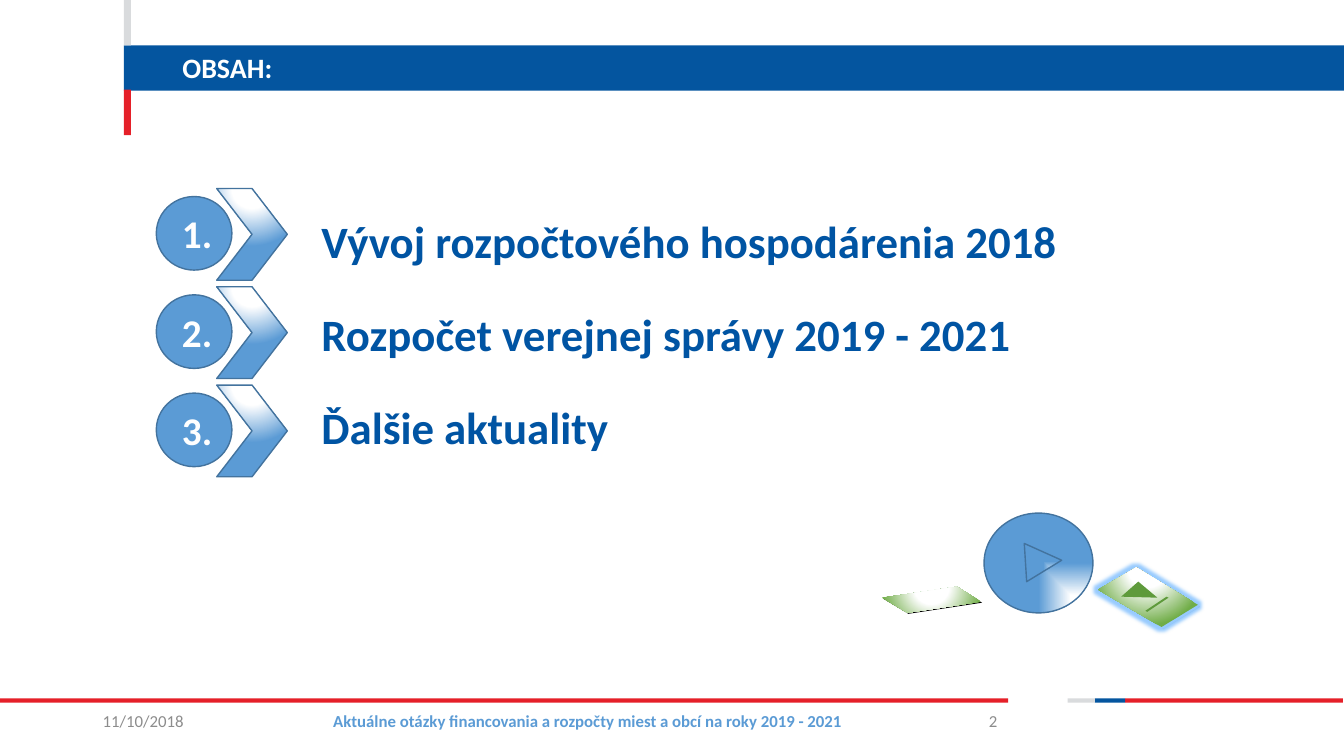
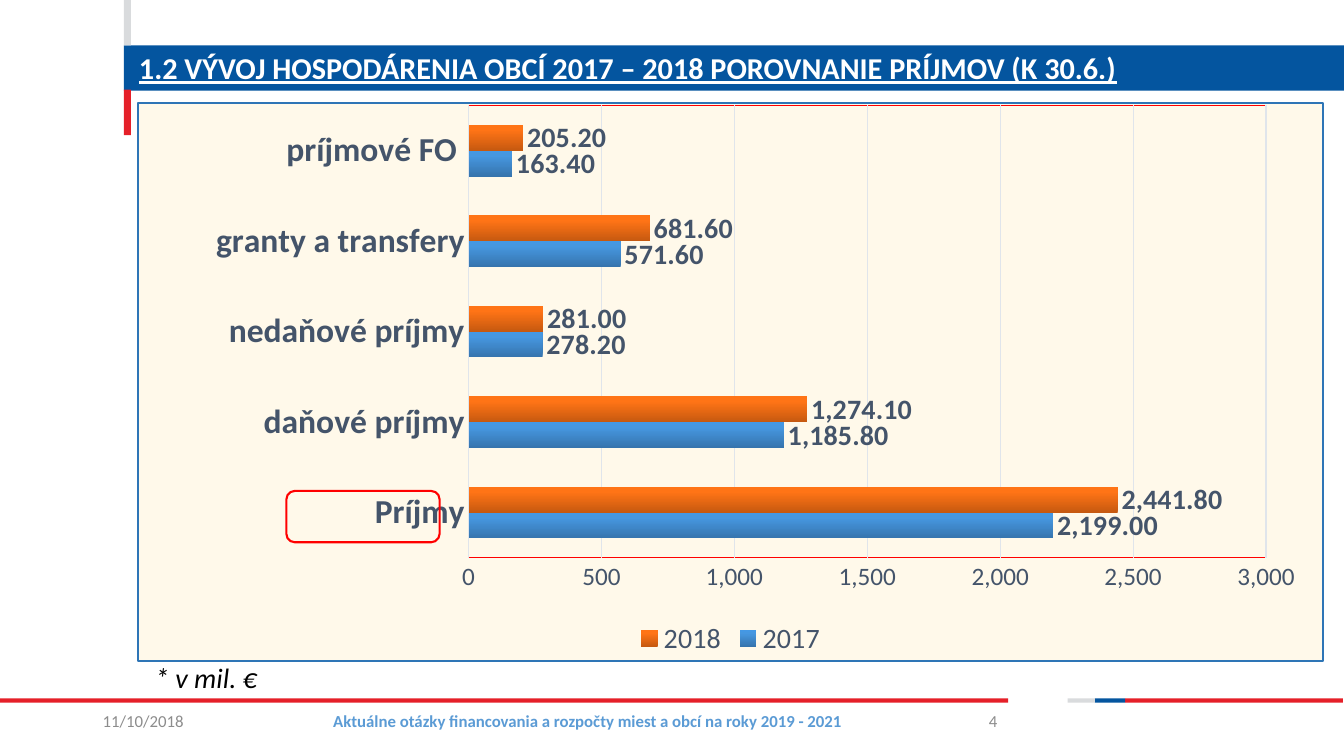
from lxml import etree
from pptx import Presentation
from pptx.chart.data import CategoryChartData
from pptx.dml.color import RGBColor
from pptx.enum.chart import XL_CHART_TYPE as ChartType
from pptx.enum.chart import XL_LABEL_POSITION as LabelPosition
from pptx.enum.chart import XL_LEGEND_POSITION as LegendPosition
from pptx.enum.chart import XL_TICK_MARK as TickMark
from pptx.enum.shapes import MSO_SHAPE as Preset
from pptx.enum.text import MSO_ANCHOR as Anchor
from pptx.enum.text import PP_ALIGN as Align
from pptx.oxml import parse_xml
from pptx.oxml.ns import nsdecls, qn
from pptx.util import Inches, Pt

FONT = "Calibri"
COLORS = {
    "band": "04559F", "red": "E52029", "grey": "D9DBDD", "white": "FFFFFF",
    "black": "000000", "muted": "8C8C8C", "blue": "5B9BD5", "outline": "43739E",
    "heading": "0054A3", "green": "70AD47", "dark_green": "5E9A3B",
    "glow": "99CCFF", "label": "44546A", "grid": "E0E5EB", "cream": "FFF2CC",
    "frame": "2E75B6", "mark": "FF0000",
}
DATE = "11/10/2018"
FOOTER = "Aktuálne otázky financovania a rozpočty miest a obcí na roky 2019 - 2021"
TOPICS = ["Vývoj rozpočtového hospodárenia 2018",
          "Rozpočet verejnej správy 2019 - 2021", "Ďalšie aktuality"]
CATEGORIES = ["Príjmy", "daňové príjmy", "nedaňové príjmy",
              "granty a transfery", "príjmové FO "]
SERIES = [
    ("2017", [2199, 1185.8, 278.2, 571.6, 163.4],
     [(0, "3674AD"), (80, "4697E0"), (100, "4498E4")]),
    ("2018", [2441.8, 1274.1, 281, 681.6, 205.2],
     [(0, "C65910"), (80, "FF7416"), (100, "FF7517")]),
]
FROM_TOP = ("circle", 50, -80, 50, 180)
FROM_CORNER = ("rect", 100, 100, 0, 0)


def rgb(name):
    return RGBColor.from_string(COLORS[name])


# Fills and effects
def set_gradient(fill, properties, stops, direction):
    """Replace the fill with stops along an angle or around a focus."""
    fill.solid()
    gradient = parse_xml(f'<a:gradFill {nsdecls("a")} rotWithShape="1"/>')
    stop_list = etree.SubElement(gradient, qn("a:gsLst"))
    for position, color in stops:
        stop = etree.SubElement(stop_list, qn("a:gs"), pos=str(position * 1000))
        etree.SubElement(stop, qn("a:srgbClr"), val=color)
    if isinstance(direction, tuple):
        kind, *focus = direction
        path = etree.SubElement(gradient, qn("a:path"), {"path": kind})
        sides = {side: str(value * 1000) for side, value in zip("ltrb", focus)}
        etree.SubElement(path, qn("a:fillToRect"), sides)
    else:
        etree.SubElement(gradient, qn("a:lin"), ang=str(direction * 60000), scaled="0")
    properties.replace(properties.find(qn("a:solidFill")), gradient)


def set_sheen(shape, color, direction):
    stops = [(0, COLORS["white"]), (35, COLORS["white"]), (100, COLORS[color])]
    set_gradient(shape.fill, shape._element.spPr, stops, direction)


def add_glow(shape, color, radius):
    effects = shape._element.spPr.find(qn("a:effectLst"))
    glow = etree.SubElement(effects, qn("a:glow"), rad=str(radius))
    etree.SubElement(glow, qn("a:srgbClr"), val=COLORS[color])


# Shapes and text
def style_shape(shape, fill=None, line=None, width=1):
    shape.shadow.inherit = False
    if fill:
        shape.fill.solid()
        shape.fill.fore_color.rgb = rgb(fill)
    else:
        shape.fill.background()
    if line:
        shape.line.color.rgb = rgb(line)
        shape.line.width = Pt(width)
    else:
        shape.line.fill.background()
    return shape


def add_preset(slide, preset, box, **style):
    shape = slide.shapes.add_shape(preset, *map(Inches, box))
    return style_shape(shape, **style)


def add_outline(slide, points, **style):
    """Draw a closed polygon; points are in hundredths of an inch."""
    builder = slide.shapes.build_freeform(*points[0], scale=Inches(0.01))
    builder.add_line_segments(points[1:], close=True)
    return style_shape(builder.convert_to_shape(), **style)


def set_font(font, size, color, bold=False):
    font.name = FONT
    font.size = Pt(size)
    font.bold = bold
    font.color.rgb = rgb(color)


def write_run(paragraph, text, size, color, bold=False):
    run = paragraph.add_run()
    run.text = text
    set_font(run.font, size, color, bold)
    return run


def add_text(slide, box, text, size, color, bold=False, align=Align.LEFT):
    frame = slide.shapes.add_textbox(*map(Inches, box)).text_frame
    frame.word_wrap = True
    frame.vertical_anchor = Anchor.MIDDLE
    paragraph = frame.paragraphs[0]
    paragraph.alignment = align
    return write_run(paragraph, text, size, color, bold)


# Shared slide frame
def add_framed_slide(presentation, number, title, title_left, title_size):
    slide = presentation.slides.add_slide(presentation.slide_layouts[6])
    for color, box in [
        ("band", (1.23, 0.45, 12.1, 0.45)),
        ("red", (11.16, 6.93, 2.16, 0.04)),
        ("band", (10.86, 6.93, 0.3, 0.04)),
        ("grey", (10.59, 6.93, 0.27, 0.04)),
        ("red", (0, 6.93, 10, 0.04)),
        ("red", (1.23, 0.89, 0.07, 0.45)),
        ("grey", (1.23, 0, 0.07, 0.45)),
    ]:
        add_preset(slide, Preset.RECTANGLE, box, fill=color)
    title_run = add_text(slide, (title_left, 0.45, 13.2 - title_left, 0.44),
                         title, title_size, "white", True)
    add_text(slide, (0.92, 6.95, 1.27, 0.4), DATE, 12, "muted")
    add_text(slide, (2.74, 6.95, 6.18, 0.4), FOOTER, 12, "blue", True, Align.CENTER)
    add_text(slide, (9.12, 6.95, 0.87, 0.4), str(number), 12, "muted",
             align=Align.RIGHT)
    return slide, title_run


# Contents slide
def add_badge(slide, number, top):
    circle = add_preset(slide, Preset.OVAL, (1.55, top + 0.08, 0.75, 0.73),
                        fill="blue", line="outline")
    chevron = add_preset(slide, Preset.CHEVRON, (2.15, top, 0.7, 0.91), line="outline")
    set_sheen(chevron, "blue", FROM_TOP)
    frame = circle.text_frame
    frame.word_wrap = False
    frame.margin_left, frame.margin_right = Inches(0.06), 0
    frame.vertical_anchor = Anchor.MIDDLE
    frame.paragraphs[0].alignment = Align.CENTER
    write_run(frame.paragraphs[0], f"{number}.", 28, "white", True)


def add_topics(slide):
    frame = slide.shapes.add_textbox(
        *map(Inches, (3.09, 2.07, 9.63, 2.6))).text_frame
    frame.word_wrap = True
    for index, topic in enumerate(TOPICS):
        paragraph = frame.paragraphs[0] if index == 0 else frame.add_paragraph()
        if index:
            paragraph.space_before = Pt(28)
        write_run(paragraph, topic, 32, "heading", True)
        add_badge(slide, index + 1, 1.87 + 0.975 * index)


def add_tile(slide, points, edge):
    """Draw a tilted green tile on a black edge."""
    add_outline(slide, [(x + edge, y + edge) for x, y in points], fill="black")
    tile = add_outline(slide, points)
    set_sheen(tile, "green", FROM_TOP)
    return tile


def add_play_buttons(slide):
    disc = add_preset(slide, Preset.OVAL, (9.76, 5.09, 1.08, 0.99), line="outline")
    arrow = add_preset(slide, Preset.ISOSCELES_TRIANGLE, (10.16, 5.39, 0.38, 0.36),
                       line="outline")
    arrow.rotation = 86.4
    for shape in (disc, arrow):
        set_sheen(shape, "blue", FROM_CORNER)
    add_tile(slide, [(875, 593), (949, 582), (973, 597), (900, 608)], 1)
    tile = add_tile(slide, [(1089, 585), (1127, 563), (1188, 600), (1152, 622)], 2)
    add_glow(tile, "glow", Inches(0.07))
    for points in ([(1112, 592), (1129, 577), (1148, 593)],
                   [(1136, 606), (1157, 592), (1159, 593), (1138, 607)]):
        add_outline(slide, points, fill="dark_green")


# Income slide
def format_area(parent, fill, line, width):
    """Build the c:spPr of a chart area or plot area."""
    return parse_xml(
        f'<c:spPr {nsdecls("c", "a")}>{fill}<a:ln w="{Pt(width)}"><a:solidFill>'
        f'<a:srgbClr val="{COLORS[line]}"/></a:solidFill></a:ln></c:spPr>')


def frame_chart(chart):
    chart_element = chart._chartSpace.find(qn("c:chart"))
    cream = (f'<a:solidFill><a:srgbClr val="{COLORS["cream"]}">'
             '<a:alpha val="40000"/></a:srgbClr></a:solidFill>')
    chart_element.addnext(format_area(chart, cream, "frame", 1.25))
    plot_area = chart_element.find(qn("c:plotArea"))
    plot_area.append(format_area(chart, "<a:noFill/>", "mark", 0.75))
    for layout in plot_area.findall(qn("c:layout")):
        plot_area.remove(layout)
    layout = parse_xml(f'<c:layout {nsdecls("c")}><c:manualLayout/></c:layout>')
    for tag, value in [("layoutTarget", "inner"), ("xMode", "edge"),
                       ("yMode", "edge"), ("x", 0.279), ("y", 0.005),
                       ("w", 0.673), ("h", 0.81)]:
        etree.SubElement(layout[0], qn(f"c:{tag}"), val=str(value))
    plot_area.insert(0, layout)


def style_axes(chart):
    category_axis, value_axis = chart.category_axis, chart.value_axis
    for axis, size, bold in [(category_axis, 24, True), (value_axis, 18, False)]:
        axis.major_tick_mark = axis.minor_tick_mark = TickMark.NONE
        set_font(axis.tick_labels.font, size, "label", bold)
    value_axis.minimum_scale, value_axis.maximum_scale = 0, 3000
    value_axis.major_unit = 500
    value_axis.tick_labels.number_format = "#,##0"
    value_axis.tick_labels.number_format_is_linked = False
    value_axis.format.line.fill.background()
    for line in (category_axis.format.line, value_axis.major_gridlines.format.line):
        line.color.rgb = rgb("grid")
        line.width = Pt(0.75)


def add_income_chart(slide):
    data = CategoryChartData()
    data.categories = CATEGORIES
    for name, values, _ in SERIES:
        data.add_series(name, values)
    chart = slide.shapes.add_chart(
        ChartType.BAR_CLUSTERED, *map(Inches, (1.36, 1.01, 11.77, 5.56)), data).chart
    set_font(chart.font, 10, "black")
    chart.has_title = False
    chart.has_legend = True
    chart.legend.position = LegendPosition.BOTTOM
    chart.legend.include_in_layout = False
    set_font(chart.legend.font, 20, "label")
    plot = chart.plots[0]
    plot.gap_width, plot.overlap = 150, 0
    plot.vary_by_categories = False
    for series, (_, _, stops) in zip(plot.series, SERIES):
        fill = series.format.fill
        set_gradient(fill, series._element.get_or_add_spPr(), stops, 270)
        labels = series.data_labels
        labels.show_value = True
        labels.position = LabelPosition.OUTSIDE_END
        labels.number_format = "#,##0.00"
        labels.number_format_is_linked = False
        set_font(labels.font, 20, "label", True)
    style_axes(chart)
    frame_chart(chart)


def main():
    presentation = Presentation()
    presentation.slide_width, presentation.slide_height = Inches(13.33), Inches(7.5)

    contents, _ = add_framed_slide(presentation, 2, "OBSAH:", 1.71, 20)
    add_topics(contents)
    add_play_buttons(contents)

    income, title_run = add_framed_slide(
        presentation, 4,
        "1.2 VÝVOJ HOSPODÁRENIA OBCÍ 2017 – 2018 POROVNANIE PRÍJMOV (K 30.6.)",
        1.28, 21.6)
    title_run.font.underline = True
    add_income_chart(income)
    add_preset(income, Preset.ROUNDED_RECTANGLE, (2.84, 4.87, 1.52, 0.51),
               line="mark", width=1.5)
    unit_run = add_text(income, (1.44, 6.5, 2.92, 0.44), "* v mil. €", 20, "black")
    unit_run.font.italic = True

    presentation.save("out.pptx")


if __name__ == "__main__":
    main()
